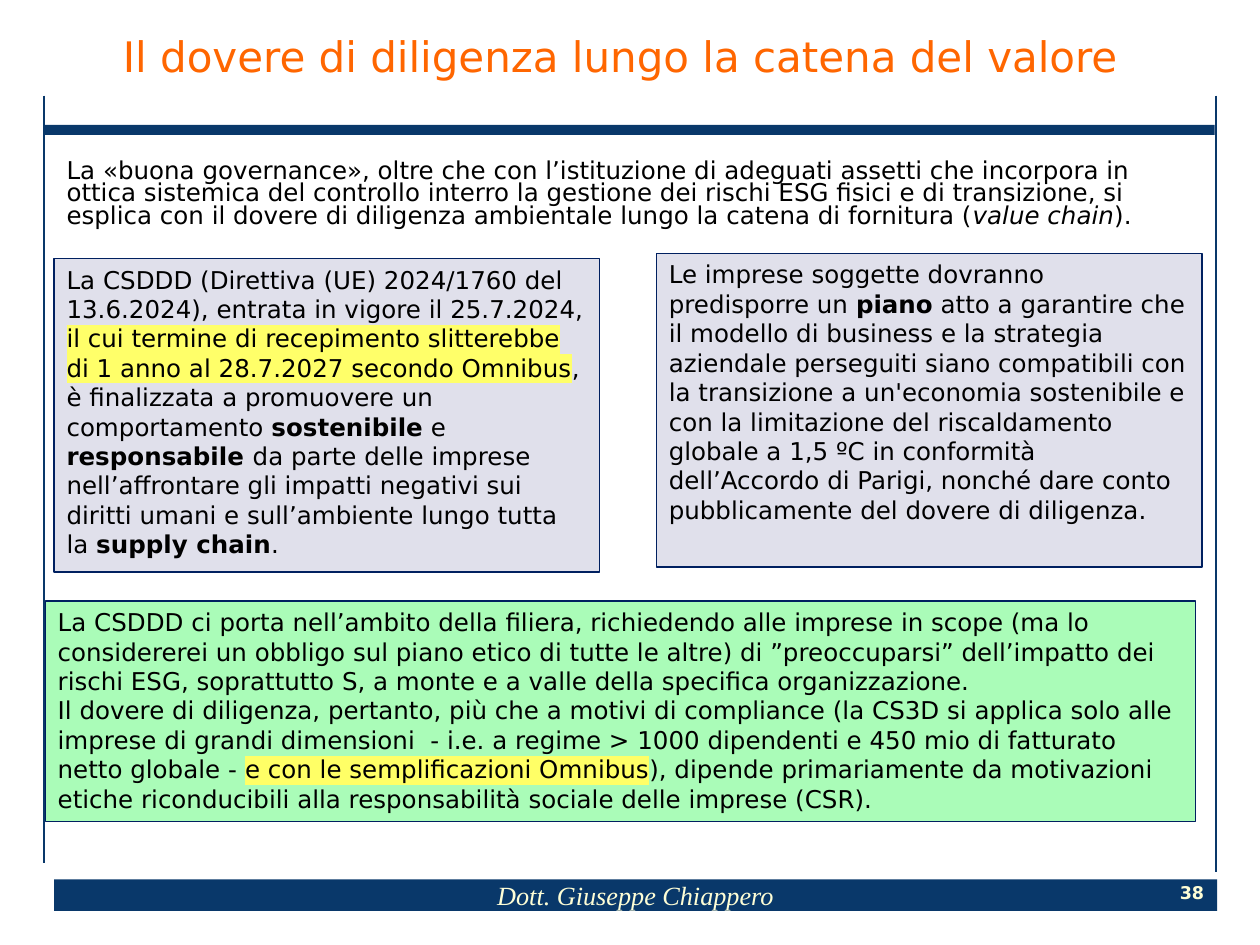
from dataclasses import dataclass
from typing import Optional

from lxml.etree import SubElement
from pptx import Presentation
from pptx.dml.color import RGBColor
from pptx.enum.shapes import MSO_CONNECTOR, MSO_SHAPE
from pptx.enum.text import MSO_ANCHOR, MSO_AUTO_SIZE, PP_ALIGN
from pptx.oxml.ns import qn
from pptx.util import Inches, Pt

NAVY = RGBColor(0x09, 0x38, 0x6A)
EDGE = RGBColor(0x00, 0x20, 0x60)
CREAM = RGBColor(0xFE, 0xFE, 0xD6)
ORANGE = RGBColor(0xFF, 0x66, 0x00)
BLACK = RGBColor(0, 0, 0)
GREY = RGBColor(0xE0, 0xE0, 0xEB)
GREEN = RGBColor(0xAA, 0xFC, 0xB8)
YELLOW = RGBColor(0xFF, 0xFF, 0x69)
LEMON = RGBColor(0xFF, 0xFF, 0x66)
SANS = "DejaVu Sans"
SERIF = "Times New Roman"


@dataclass(frozen=True)
class Span:
    text: str
    bold: bool = False
    italic: bool = False
    mark: Optional[RGBColor] = None


@dataclass(frozen=True)
class Panel:
    left: float
    top: float
    width: float
    height: float
    fill: RGBColor
    paras: list[list[Span]]


INTRO = [
    Span("La «buona governance», oltre che con l’istituzione di adeguati assetti che "
         "incorpora in ottica sistemica del controllo interro la gestione dei rischi ESG "
         "fisici e di transizione, si esplica con il dovere di diligenza ambientale lungo "
         "la catena di fornitura ("),
    Span("value chain", italic=True),
    Span(")."),
]

PANELS = [
    Panel(0.43, 2.05, 4.33, 2.49, GREY, [[
        Span("La CSDDD (Direttiva (UE) 2024/1760 del 13.6.2024), entrata in vigore il "
             "25.7.2024, "),
        Span("il cui termine di recepimento slitterebbe di 1 anno al 28.7.2027 secondo "
             "Omnibus", mark=YELLOW),
        Span(", è finalizzata a promuovere un comportamento "),
        Span("sostenibile", bold=True),
        Span(" e "),
        Span("responsabile ", bold=True),
        Span("da parte delle imprese nell’affrontare gli impatti negativi sui diritti "
             "umani e sull’ambiente lungo tutta la "),
        Span("supply chain", bold=True),
        Span("."),
    ]]),
    Panel(5.21, 2.01, 4.33, 2.49, GREY, [[
        Span("Le imprese soggette dovranno predisporre un "),
        Span("piano", bold=True),
        Span(" atto a garantire che il modello di business e la strategia aziendale "
             "perseguiti siano compatibili con la transizione a un'economia sostenibile e "
             "con la limitazione del riscaldamento globale a 1,5 ºC in conformità "
             "dell’Accordo di Parigi, nonché dare conto pubblicamente del dovere di "
             "diligenza."),
    ]]),
    Panel(0.36, 4.77, 9.13, 1.75, GREEN, [
        [Span("La CSDDD ci porta nell’ambito della filiera, richiedendo alle imprese in "
              "scope (ma lo considererei un obbligo sul piano etico di tutte le altre) di "
              "”preoccuparsi” dell’impatto dei rischi ESG, soprattutto S, a monte e a "
              "valle della specifica organizzazione.")],
        [Span("Il dovere di diligenza, pertanto, più che a motivi di compliance (la CS3D "
              "si applica solo alle imprese di grandi dimensioni  - i.e. a regime > 1000 "
              "dipendenti e 450 mio di fatturato netto globale - "),
         Span("e con le semplificazioni Omnibus", mark=LEMON),
         Span("), dipende primariamente da motivazioni etiche riconducibili alla "
              "responsabilità sociale delle imprese (CSR).")],
    ]),
]


def style(para, size: float, color: RGBColor, name: str = SANS, align=PP_ALIGN.LEFT) -> None:
    para.alignment = align
    para.font.size = Pt(size)
    para.font.name = name
    para.font.color.rgb = color


def write(frame, paras: list[list[Span]]) -> None:
    """Fill a text frame with body paragraphs made of spans."""
    frame.word_wrap = True
    frame.vertical_anchor = MSO_ANCHOR.TOP
    for i, spans in enumerate(paras):
        para = frame.add_paragraph() if i else frame.paragraphs[0]
        style(para, 14, BLACK)
        for span in spans:
            run = para.add_run()
            run.text = span.text
            if span.bold:
                run.font.bold = True
            if span.italic:
                run.font.italic = True
            if span.mark is not None:
                light = SubElement(run.font._element, qn("a:highlight"))
                SubElement(light, qn("a:srgbClr"), val=str(span.mark))


def add_rect(slide, left: float, top: float, width: float, height: float, fill: RGBColor):
    rect = slide.shapes.add_shape(MSO_SHAPE.RECTANGLE, Inches(left), Inches(top),
                                  Inches(width), Inches(height))
    rect.shadow.inherit = False
    rect.fill.solid()
    rect.fill.fore_color.rgb = fill
    rect.line.fill.background()
    return rect


def add_rule(slide, x: float, top: float, bottom: float) -> None:
    rule = slide.shapes.add_connector(MSO_CONNECTOR.STRAIGHT, Inches(x), Inches(top),
                                      Inches(x), Inches(bottom))
    rule.line.color.rgb = NAVY
    rule.line.width = Pt(1)
    SubElement(rule._element.spPr, qn("a:effectLst"))


def add_panel(slide, panel: Panel) -> None:
    rect = add_rect(slide, panel.left, panel.top, panel.width, panel.height, panel.fill)
    rect.line.color.rgb = EDGE
    rect.line.width = Pt(0.75)
    write(rect.text_frame, panel.paras)


def add_frame(slide) -> None:
    """Draw the bars, side rules, footer and page number."""
    add_rect(slide, 0.35, 0.99, 9.29, 0.08, NAVY)
    foot = add_rect(slide, 0.43, 6.98, 9.23, 0.25, NAVY).text_frame
    foot.vertical_anchor = MSO_ANCHOR.MIDDLE
    para = foot.paragraphs[0]
    para.text = "Dott. Giuseppe Chiappero"
    style(para, 15, CREAM, SERIF, PP_ALIGN.CENTER)
    para.font.italic = True

    add_rule(slide, 0.35, 0.76, 6.85)
    add_rule(slide, 9.65, 0.76, 6.92)

    page = slide.shapes.add_textbox(Inches(9.33), Inches(6.98), Inches(0.26),
                                    Inches(0.2)).text_frame
    page.word_wrap = False
    page.margin_left = page.margin_right = page.margin_top = page.margin_bottom = 0
    page.vertical_anchor = MSO_ANCHOR.MIDDLE
    para = page.paragraphs[0]
    para.text = "38"
    style(para, 10, CREAM, align=PP_ALIGN.CENTER)
    para.font.bold = True


def set_title(slide) -> None:
    title = slide.shapes.title
    title.left, title.top = Inches(0.2), Inches(0.23)
    title.width, title.height = Inches(9.45), Inches(0.5)
    frame = title.text_frame
    frame.auto_size = MSO_AUTO_SIZE.NONE
    frame.word_wrap = False
    frame.vertical_anchor = MSO_ANCHOR.MIDDLE
    para = frame.paragraphs[0]
    para.text = "Il dovere di diligenza lungo la catena del valore"
    para.line_spacing = 0.8
    style(para, 24, ORANGE, align=PP_ALIGN.CENTER)


def main() -> None:
    deck = Presentation()
    deck.slide_width, deck.slide_height = Inches(10), Inches(7.5)
    slide = deck.slides.add_slide(deck.slide_layouts[5])
    add_frame(slide)
    set_title(slide)
    intro = slide.shapes.add_textbox(Inches(0.43), Inches(1.23), Inches(9.13), Inches(0.78))
    write(intro.text_frame, [INTRO])
    intro.text_frame.paragraphs[0].line_spacing = Pt(13)
    for panel in PANELS:
        add_panel(slide, panel)
    deck.save("out.pptx")


if __name__ == "__main__":
    main()
